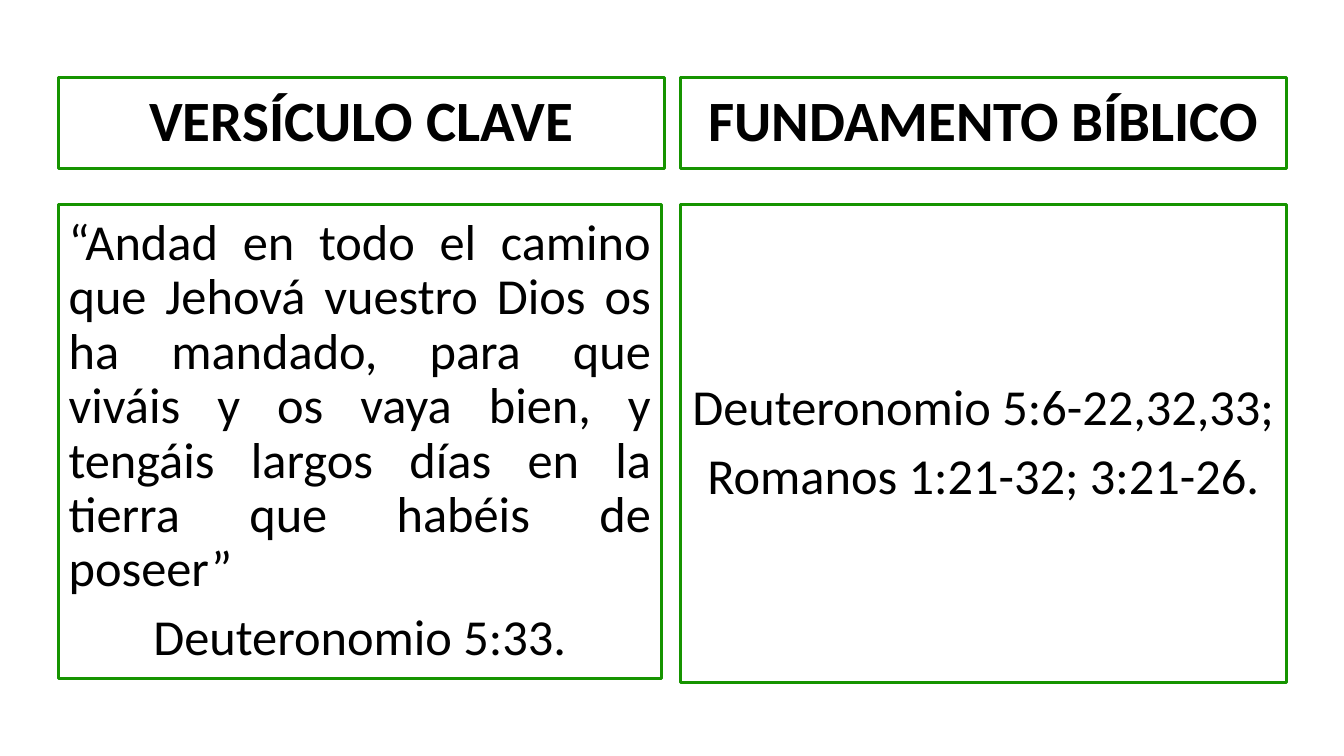
from lxml import etree
from pptx import Presentation
from pptx.dml.color import RGBColor
from pptx.enum.text import MSO_ANCHOR, MSO_AUTO_SIZE, PP_ALIGN
from pptx.oxml.ns import qn
from pptx.util import Inches, Pt

CENTER, JUSTIFY = PP_ALIGN.CENTER, PP_ALIGN.JUSTIFY
MIDDLE = MSO_ANCHOR.MIDDLE
NO_AUTOFIT = MSO_AUTO_SIZE.NONE
GREEN = RGBColor(0x16, 0x94, 0x00)
BLACK = RGBColor(0x00, 0x00, 0x00)
COMPARISON_LAYOUT = 4


class ComparisonSlide:
    """Two columns of outlined boxes, each with a heading and a body."""

    font_name = "Calibri"
    heading_size = Pt(40.7)
    body_size = Pt(36)
    line_width = Pt(2.25)
    paragraph_gap = Pt(10)

    def __init__(self, prs):
        self.slide = prs.slides.add_slide(prs.slide_layouts[COMPARISON_LAYOUT])
        title = self.slide.shapes.title._element
        title.getparent().remove(title)

    def box(self, idx, left, top, width, height):
        sp = self.slide.placeholders[idx]
        sp.left, sp.top = Inches(left), Inches(top)
        sp.width, sp.height = Inches(width), Inches(height)
        sp.line.color.rgb = GREEN
        sp.line.width = self.line_width
        tf = sp.text_frame
        tf.word_wrap = True
        tf.auto_size = NO_AUTOFIT
        tf.vertical_anchor = MIDDLE
        return tf

    def add_lines(self, tf, lines, size, bold=False):
        for i, (text, align) in enumerate(lines):
            p = tf.add_paragraph() if i else tf.paragraphs[0]
            p.alignment = align
            p.line_spacing = 0.9
            p.space_before = self.paragraph_gap if i else Pt(0)
            pPr = p._p.get_or_add_pPr()
            pPr.set("marL", "0")
            pPr.set("indent", "0")
            etree.SubElement(pPr, qn("a:buNone"))
            r = p.add_run()
            r.text = text
            r.font.name = self.font_name
            r.font.size = size
            r.font.bold = bold
            r.font.color.rgb = BLACK

    def heading(self, idx, text, *place):
        self.add_lines(self.box(idx, *place), [(text, CENTER)], self.heading_size, True)

    def body(self, idx, lines, *place):
        self.add_lines(self.box(idx, *place), lines, self.body_size)


def main():
    prs = Presentation()
    prs.slide_width, prs.slide_height = Inches(13.33), Inches(7.5)
    s = ComparisonSlide(prs)
    left, right = 0.58, 6.75
    heading_top, body_top = 0.77, 2.03

    # Key verse
    s.heading(1, "VERSÍCULO CLAVE", left, heading_top, 6.01, 0.9)
    s.body(2, [
        ("“Andad en todo el camino que Jehová vuestro Dios os ha mandado, "
         "para que viváis y os vaya bien, y tengáis largos días en la tierra "
         "que habéis de poseer”", JUSTIFY),
        ("Deuteronomio 5:33.", CENTER),
    ], left, body_top, 5.98, 4.7)

    # Biblical basis
    s.heading(3, "FUNDAMENTO BÍBLICO", right, heading_top, 6.01, 0.9)
    s.body(4, [
        ("Deuteronomio 5:6-22,32,33;", CENTER),
        ("Romanos 1:21-32; 3:21-26.", CENTER),
    ], right, body_top, 6.01, 4.74)

    prs.save("out.pptx")


if __name__ == "__main__":
    main()
